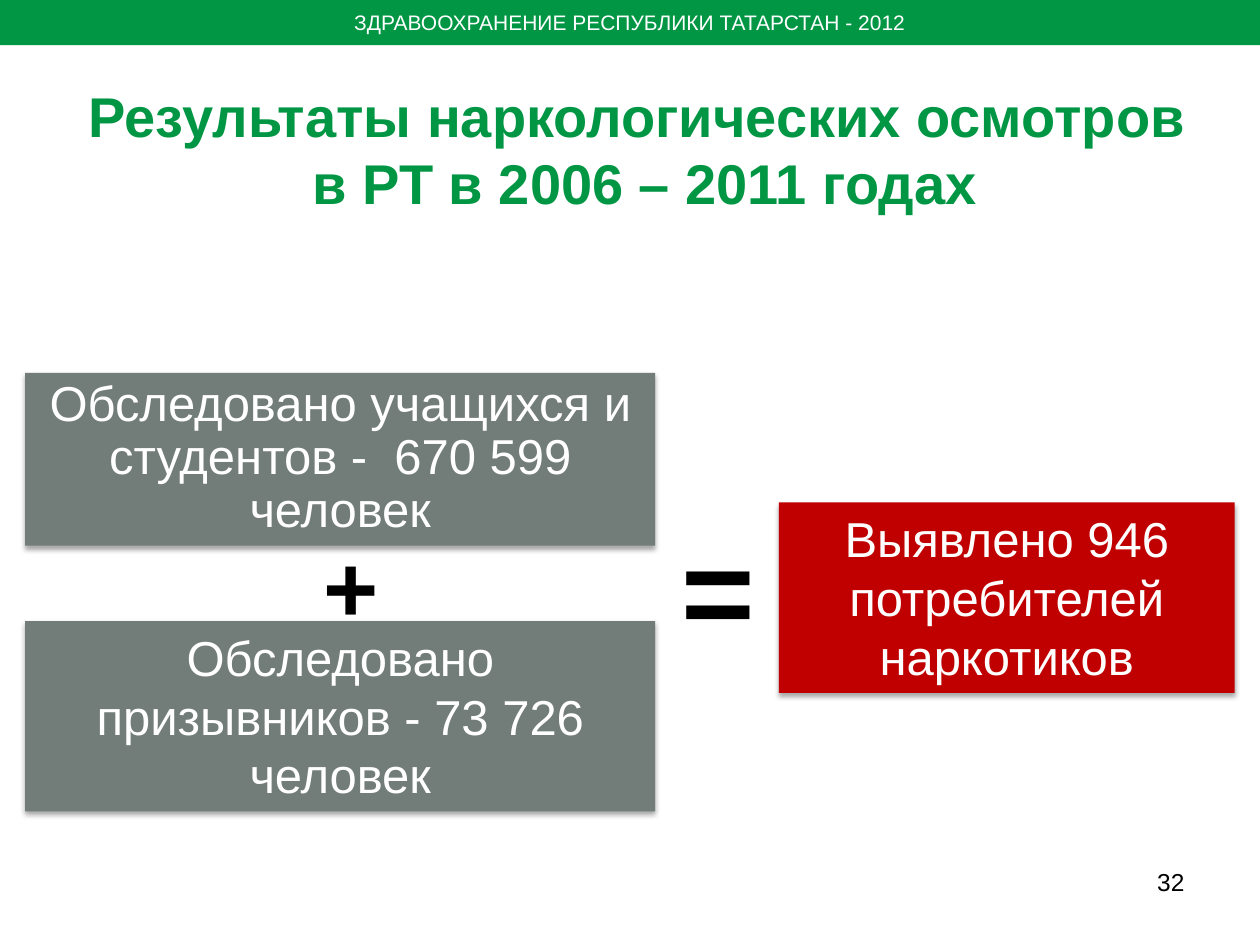
from lxml import etree
from pptx import Presentation
from pptx import util as u
from pptx.dml import color
from pptx.enum import shapes, text
from pptx.oxml import ns

COLOURS = {"green": "009644", "grey": "727C79", "red": "C00000",
           "white": "FFFFFF", "black": "000000"}
ALIGN = text.PP_ALIGN


def rgb(name):
    """Return the named colour."""
    return color.RGBColor.from_string(COLOURS[name])


def write(box, words, size, ink, align=ALIGN.CENTER, bold=False, spacing=None,
          wrap=True, anchor=text.MSO_ANCHOR.TOP):
    """Put one formatted paragraph into a box."""
    frame = box.text_frame
    for name, value in {"word_wrap": wrap, "vertical_anchor": anchor,
                        "auto_size": text.MSO_AUTO_SIZE.NONE}.items():
        setattr(frame, name, value)
    para = frame.paragraphs[0]
    para.text = words
    para.alignment = align
    if spacing:
        para.line_spacing = spacing
    for span in para.runs:
        for name, value in {"name": "Arial", "size": u.Pt(size), "bold": bold}.items():
            setattr(span.font, name, value)
        span.font.color.rgb = rgb(ink)


def add_label(page, area, words, size, ink, **layout):
    """Add a text box over the given area."""
    box = page.shapes.add_textbox(*map(u.Cm, area))
    write(box, words, size, ink, **layout)


def add_panel(page, area, fill, words, size, **layout):
    """Add a filled rectangle with white text."""
    box = page.shapes.add_shape(shapes.MSO_SHAPE.RECTANGLE, *map(u.Cm, area))
    box.shadow.inherit = False
    box.fill.solid()
    box.fill.fore_color.rgb = rgb(fill)
    box.line.fill.background()
    write(box, words, size, "white", **layout)
    return box


def add_shadow(box):
    """Give a shape a soft shadow below it."""
    effects = box.element.spPr.find(ns.qn("a:effectLst"))
    shadow = etree.SubElement(effects, ns.qn("a:outerShdw"), blurRad=str(u.Pt(3.1)),
                              dist=str(u.Pt(1.8)), dir="5400000", rotWithShape="0")
    tint = etree.SubElement(shadow, ns.qn("a:srgbClr"), val=COLOURS["black"])
    etree.SubElement(tint, ns.qn("a:alpha"), val="35000")


def add_header(page, left, top, width):
    """Add the green band and the slide title."""
    add_panel(page, (left, top, width, 0.91), "green",
              "ЗДРАВООХРАНЕНИЕ РЕСПУБЛИКИ ТАТАРСТАН - 2012", 12,
              wrap=False, anchor=text.MSO_ANCHOR.MIDDLE)
    add_label(page, (left + 1.5, top + 1.52, 23.01, 3),
              "Результаты наркологических осмотров \vв РТ в 2006 – 2011 годах",
              32, "green", bold=True)


def add_equation(page, left, top):
    """Add the two examined groups, the signs and the outcome."""
    panels = [
        (0, 0, 12.7, 3.48, "grey", "Обследовано учащихся и студентов -  670 599 человек", 0.9),
        (0, 5, 12.7, 3.84, "grey", "Обследовано призывников - 73 726 человек", None),
        (15.19, 2.61, 9.19, 3.84, "red", "Выявлено 946 потребителей наркотиков", None),
    ]
    for across, down, width, height, fill, words, spacing in panels:
        area = (left + across, top + down, width, height)
        add_shadow(add_panel(page, area, fill, words, 28, spacing=spacing))
    signs = [(5.76, 3, 1.63, 2.57, "+", 54), (12.98, 2.67, 2.01, 3.33, "=", 72)]
    for across, down, width, height, sign, size in signs:
        add_label(page, (left + across, top + down, width, height), sign, size,
                  "black", align=ALIGN.LEFT, bold=True, wrap=False)


def add_number(page, left, top):
    """Add the slide number."""
    add_label(page, (left, top, 5.92, 1.32), "32", 14, "black", align=ALIGN.RIGHT)


def main():
    """Build and save the slide."""
    deck = Presentation()
    deck.slide_width, deck.slide_height = u.Cm(25.4), u.Cm(19.05)
    page = deck.slides.add_slide(deck.slide_layouts[6])
    add_header(page, 0, 0, 25.4)
    add_equation(page, 0.51, 7.52)
    add_number(page, 18.21, 17.35)
    deck.save("out.pptx")


if __name__ == "__main__":
    main()
